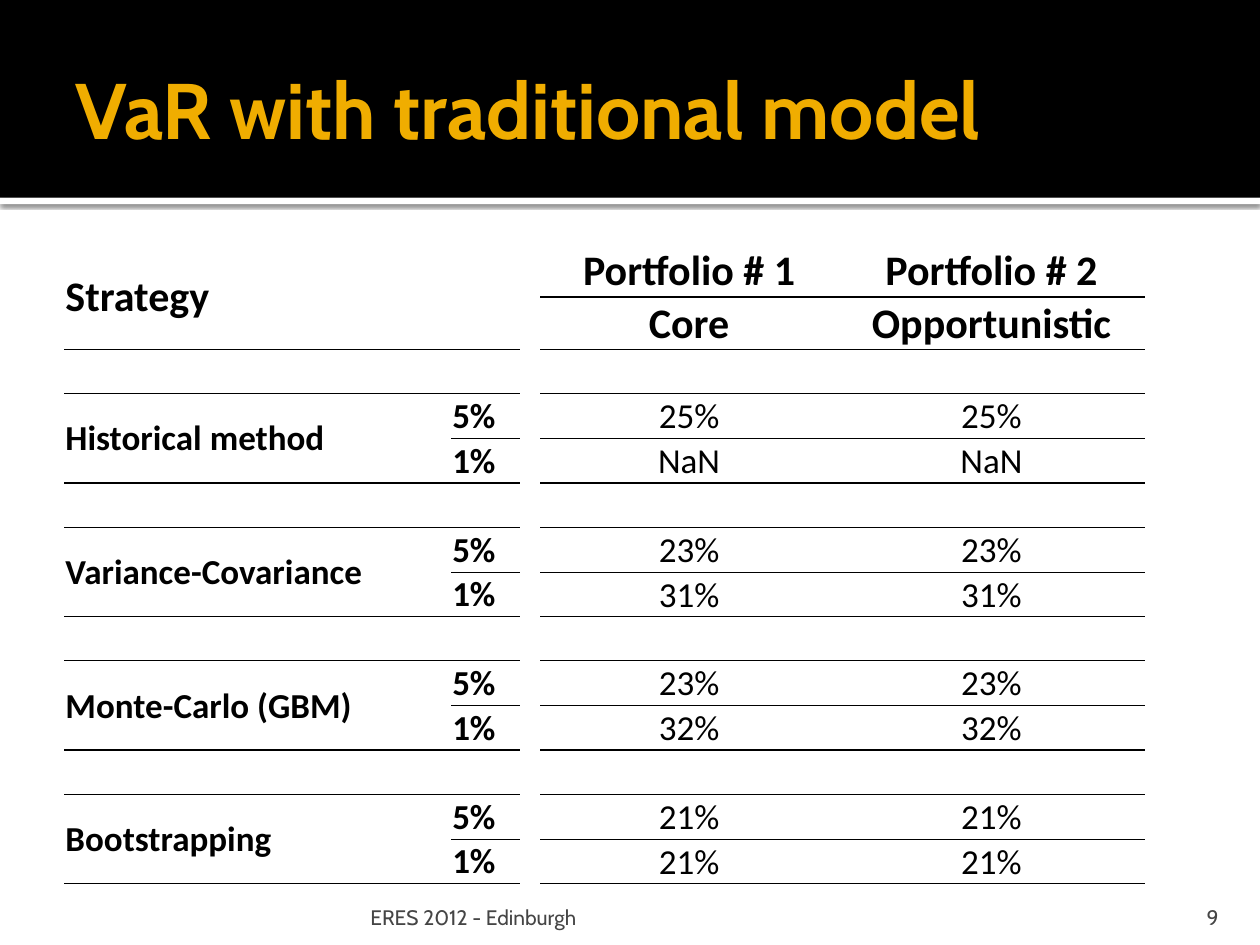
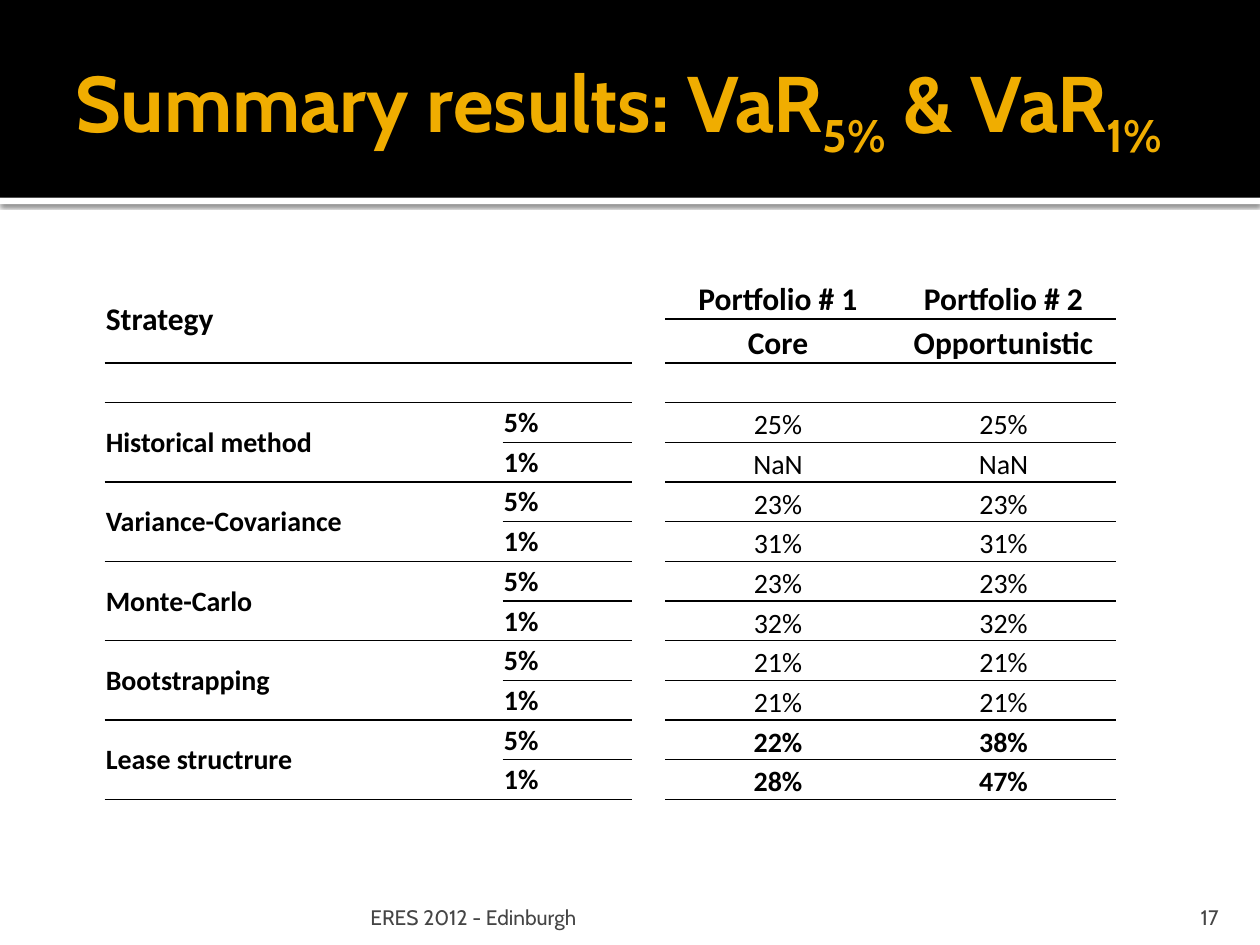
from dataclasses import dataclass

from lxml.etree import SubElement
from pptx import Presentation
from pptx.dml.color import RGBColor
from pptx.enum.shapes import MSO_SHAPE
from pptx.enum.text import MSO_ANCHOR, MSO_AUTO_SIZE, PP_ALIGN
from pptx.oxml import parse_xml
from pptx.oxml.ns import nsdecls, qn
from pptx.util import Inches, Pt

# Content
FOOTER = "ERES 2012 - Edinburgh"
HEADINGS = [("Portfolio # 1", "Portfolio # 2"), ("Core", "Opportunistic")]
LEVELS = ("5%", "1%")
HISTORICAL = ("Historical method", [("25%", "25%"), ("NaN", "NaN")])
COVARIANCE = ("Variance-Covariance", [("23%", "23%"), ("31%", "31%")])
MONTE_CARLO = [("23%", "23%"), ("32%", "32%")]
BOOTSTRAP = ("Bootstrapping", [("21%", "21%"), ("21%", "21%")])
LEASE = ("Lease structrure", [("22%", "38%"), ("28%", "47%")])

# Title runs are (text, is subscript)
SLIDES = [
    dict(number="9", title=[("VaR with traditional model", False)],
         methods=[HISTORICAL, COVARIANCE, ("Monte-Carlo (GBM)", MONTE_CARLO), BOOTSTRAP],
         spaced=True, highlight=None,
         at=(0.51, 1.94), cols=(3.07, 0.55, 0.16, 2.36, 2.44),
         heights=dict(head=0.36, gap=0.33, data=0.355), head_size=24, body_size=20),
    dict(number="17",
         title=[("Summary results: VaR", False), ("5%", True), (" & VaR", False), ("1%", True)],
         methods=[HISTORICAL, COVARIANCE, ("Monte-Carlo", MONTE_CARLO), BOOTSTRAP, LEASE],
         spaced=False, highlight="Lease structrure",
         at=(0.83, 2.18), cols=(3.16, 1.03, 0.26, 1.79, 1.79),
         heights=dict(head=0.35, gap=0.315, data=0.315), head_size=18, body_size=16),
]


@dataclass(frozen=True)
class Theme:
    black = RGBColor(0, 0, 0)
    white = RGBColor(255, 255, 255)
    gold = RGBColor(0xF0, 0xAD, 0x00)
    grey = RGBColor(0x45, 0x45, 0x45)
    heading_font = "Cabin"
    table_font = "Calibri"
    title_size = 45
    footer_size = 12
    thick, thin = 1, 0.5
    no_style = "{2D5ABB26-0587-4C30-8999-92F81FD0307C}"


T = Theme()
LABEL_COLS, VALUE_COLS = (0, 1), (3, 4)


def set_font(p, name, size, color, bold=False):
    f = p.font
    f.name, f.size, f.bold = name, Pt(size), bold
    f.color.rgb = color


def set_frame(tf, insets, anchor):
    tf.margin_left, tf.margin_top, tf.margin_right, tf.margin_bottom = map(Inches, insets)
    tf.vertical_anchor = anchor
    tf.word_wrap = True
    tf.auto_size = MSO_AUTO_SIZE.NONE


# Shared bands, kept on the layout
def add_bands(slide, layout):
    for top, height, color in ((0, 1.57, T.black), (1.57, 0.05, T.white)):
        sp = slide.shapes.add_shape(MSO_SHAPE.RECTANGLE, 0, Inches(top), Inches(10), Inches(height))
        sp.shadow.inherit = False
        sp.fill.solid()
        sp.fill.fore_color.rgb = color
        sp.line.fill.background()
        if color == T.white:
            effects = sp.element.spPr.find(qn("a:effectLst"))
            effects.append(parse_xml(
                f'<a:outerShdw {nsdecls("a")} blurRad="{Pt(2.5)}" dist="{Pt(0.8)}" dir="5400000">'
                '<a:srgbClr val="000000"><a:alpha val="60000"/></a:srgbClr></a:outerShdw>'))
        layout.shapes.element.insert(2, sp.element)


def set_title(slide, runs):
    sp = slide.shapes.title
    sp.left, sp.top, sp.width, sp.height = map(Inches, (0.5, 0.17, 9, 1.37))
    set_frame(sp.text_frame, (0.1, 0.05, 0.05, 0.05), MSO_ANCHOR.MIDDLE)
    p = sp.text_frame.paragraphs[0]
    p.alignment = PP_ALIGN.LEFT
    set_font(p, T.heading_font, T.title_size, T.gold, True)
    for text, subscript in runs:
        r = p.add_run()
        r.text = text
        if subscript:
            r.font._element.set("baseline", "-25000")


def add_footer(slide, number):
    for text, left, width, inset, align in ((FOOTER, 2.89, 6.02, 0.05, PP_ALIGN.LEFT),
                                            (number, 8.97, 0.8, 0.1, PP_ALIGN.RIGHT)):
        sp = slide.shapes.add_textbox(Inches(left), Inches(7.08), Inches(width), Inches(0.3))
        set_frame(sp.text_frame, (inset, 0.05, inset, 0), MSO_ANCHOR.BOTTOM)
        p = sp.text_frame.paragraphs[0]
        p.text, p.alignment = text, align
        set_font(p, T.heading_font, T.footer_size, T.grey)


# Table
def table_rows(s):
    """Return rows as (kind, label, level, values, bold values)."""
    rows = [("head", label, "", values, True) for label, values in zip(("Strategy", ""), HEADINGS)]
    for i, (method, results) in enumerate(s["methods"]):
        if s["spaced"] or i == 0:
            rows.append(("gap", "", "", ("", ""), False))
        for label, level, values in zip((method, ""), LEVELS, results):
            rows.append(("data", label, level, values, method == s["highlight"]))
    return rows


def fill_cell(cell, text, size, bold, centred):
    cell.fill.solid()
    cell.fill.fore_color.rgb = T.white
    cell.margin_left = cell.margin_top = cell.margin_right = Inches(0.01)
    cell.margin_bottom = 0
    cell.vertical_anchor = MSO_ANCHOR.BOTTOM if centred else MSO_ANCHOR.MIDDLE
    p = cell.text_frame.paragraphs[0]
    p.text = text
    p.alignment = PP_ALIGN.CENTER if centred else PP_ALIGN.LEFT
    set_font(p, T.table_font, size, T.black, bold)
    if not text:
        SubElement(p._p, qn("a:endParaRPr")).set("sz", str(size * 100))


def add_border(cell, side, width):
    cell._tc.get_or_add_tcPr().insert(0, parse_xml(
        f'<a:{side} {nsdecls("a")} w="{Pt(width)}"><a:solidFill>'
        f'<a:srgbClr val="{T.black}"/></a:solidFill></a:{side}>'))


def add_rules(tbl, kinds):
    # Bottom-up, so each cell gets its top border in front of its bottom one
    for i in reversed(range(len(kinds))):
        ends_group = kinds[i] == "gap" or (i + 1 == len(kinds)) or kinds[i + 1] == "gap" \
            or kinds[:i + 1].count("data") % 2 == 0 and kinds[i] == "data"
        if not ends_group and kinds[i] != "head":
            continue
        width = T.thin if kinds[i] == "gap" else T.thick
        for c in (LABEL_COLS if ends_group else ()) + VALUE_COLS:
            add_border(tbl.cell(i, c), "a:lnB"[2:], width)
            if i + 1 < len(kinds):
                add_border(tbl.cell(i + 1, c), "lnT", width)
            if c == 0 and kinds[i] != "gap":
                add_border(tbl.cell(i - 1, c), "lnB", width)


def add_results(slide, s):
    rows = table_rows(s)
    kinds = [row[0] for row in rows]
    heights = [s["heights"][kind] for kind in kinds]
    tbl = slide.shapes.add_table(len(rows), len(s["cols"]), *map(
        Inches, (*s["at"], sum(s["cols"]), sum(heights)))).table
    tbl.first_row = tbl.horz_banding = False
    tbl._tbl.tblPr.find(qn("a:tableStyleId")).text = T.no_style
    for col, width in zip(tbl.columns, s["cols"]):
        col.width = Inches(width)
    for i, (kind, label, level, values, bold) in enumerate(rows):
        tbl.rows[i].height = Inches(heights[i])
        size = s["head_size"] if kind == "head" else s["body_size"]
        for c, text in enumerate((label, level, "", *values)):
            centred = c in VALUE_COLS
            fill_cell(tbl.cell(i, c), text, size, bold or not centred, centred)
        if label:
            tbl.cell(i, 0).merge(tbl.cell(i + 1, 0))
    add_rules(tbl, kinds)


def main():
    prs = Presentation()
    prs.slide_width, prs.slide_height = Inches(10), Inches(7.5)
    layout = prs.slide_layouts[5]
    for i, s in enumerate(SLIDES):
        slide = prs.slides.add_slide(layout)
        if i == 0:
            add_bands(slide, layout)
        set_title(slide, s["title"])
        add_footer(slide, s["number"])
        add_results(slide, s)
    prs.save("out.pptx")


if __name__ == "__main__":
    main()
